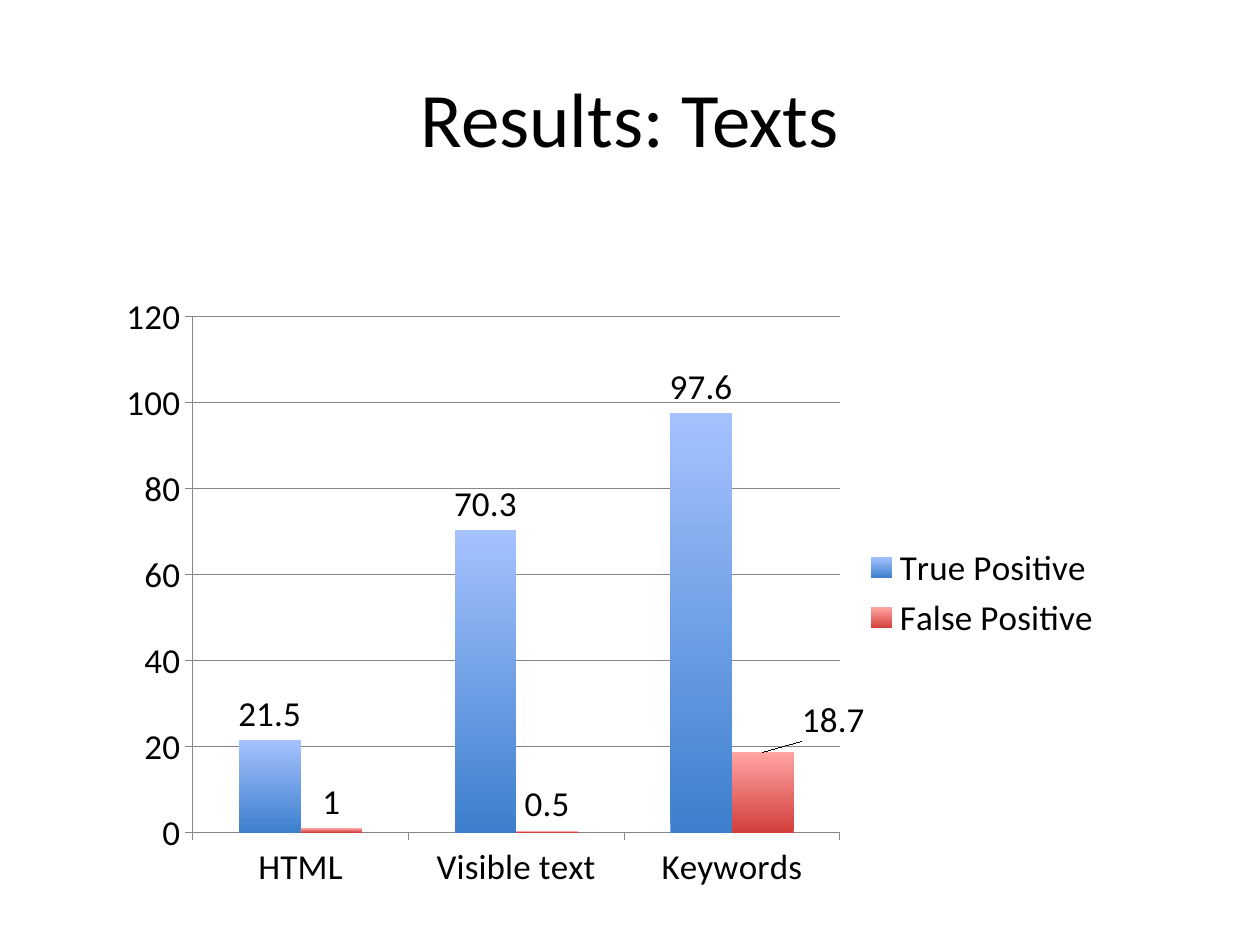
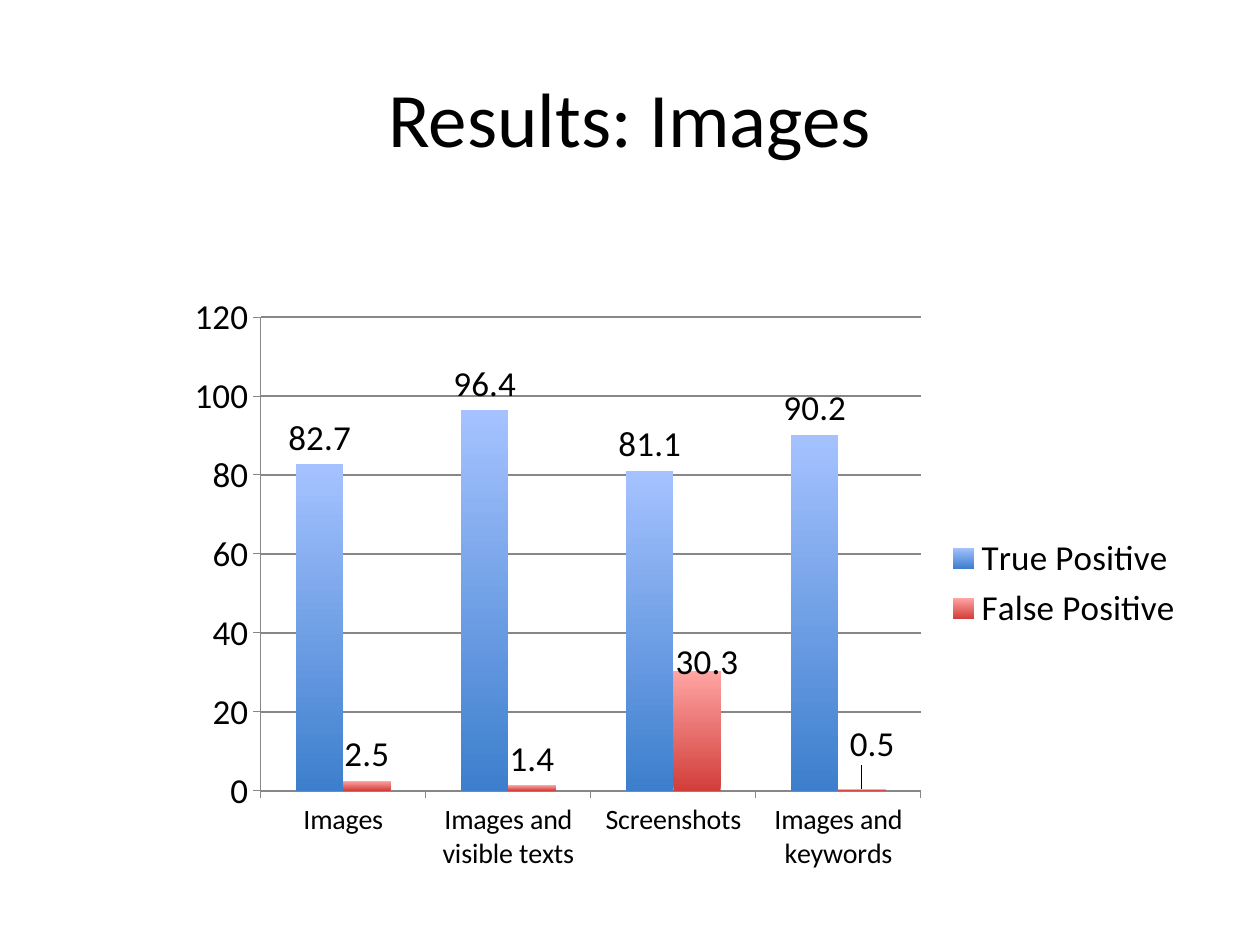
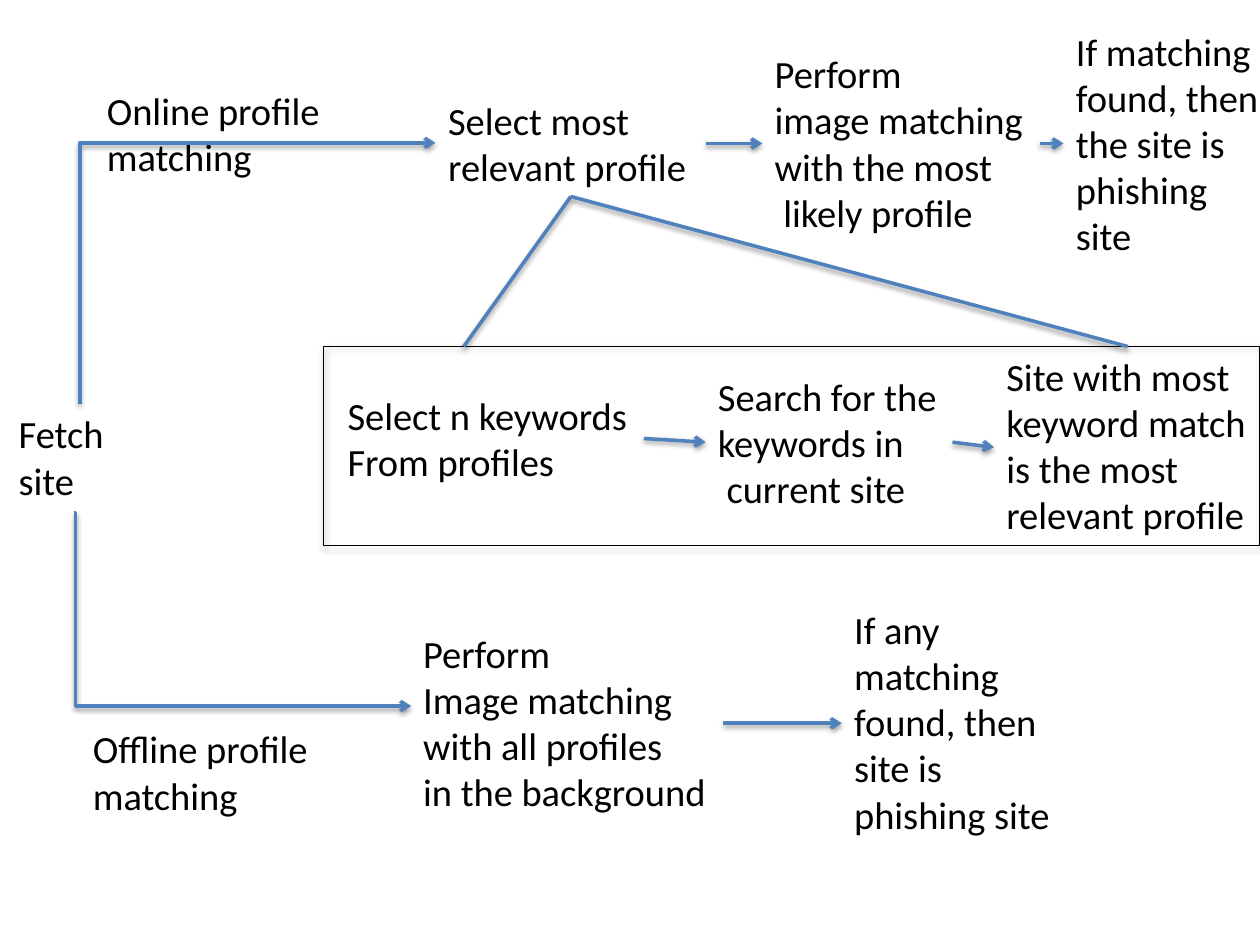
from pptx import Presentation, util as u
from pptx.chart.data import CategoryChartData
from pptx.dml.color import RGBColor
from pptx.enum import chart as ch, shapes, text
from pptx.oxml import parse_xml
from pptx.oxml.ns import nsdecls, qn

Pt = u.Pt
FONT = "Calibri"
HUES = {"ink": "000000", "line": "4F81BD", "grid": "878787"}
FADES = [("3D7FCD", "A5C2FF"), ("D23E3A", "FFA5A3")]
NAMES = ["True Positive", "False Positive"]

CHARTS = [
    {
        "title": "Results: Texts",
        "at": (61.2, 162, 576, 353.5),
        "cats": ["HTML", "Visible text", "Keywords"],
        "vals": [(21.5, 70.3, 97.6), (1, 0.5, 18.7)],
        "plot": (0.085, 0.054, 0.642, 0.834),
        "cat size": 20,
        "grid": 0.5,
        "moved": {2: (0.07, -0.01)},
    },
    {
        "title": "Results: Images",
        "at": (100, 162, 584, 342.7),
        "cats": ["Images", "Images and visible texts", "Screenshots", "Images and keywords"],
        "vals": [(82.7, 96.4, 81.1, 90.2), (2.5, 1.4, 30.3, 0.5)],
        "plot": (0.084, 0.056, 0.646, 0.79),
        "cat size": 16,
        "grid": 1,
        "moved": {2: (0.01, 0.03), 3: (0.01, -0.03)},
    },
]

STEPS = [
    ("Fetch site", (3.6, 231, 85, 60.5), True),
    ("Select n keywords\nFrom profiles", (191.5, 220.3, 176.4, 60.5), False),
    ("Search for the\nkeywords in\n current site", (403.2, 209.5, 141, 87), False),
    ("Site with most keyword match is the most relevant profile", (568, 198, 152, 113.8), True),
    ("Perform\nimage matching\nwith the most\n likely profile", (435.6, 25.2, 157.7, 113.8), False),
    ("Select most relevant profile", (249, 51.8, 154, 60.5), True),
    ("Perform\nImage matching\nwith all profiles\nin the background", (234.7, 356.4, 178.6, 113.8), False),
    ("If matching found, then the site is phishing site", (607.7, 12.2, 118.8, 140.4), True),
    ("If any matching found, then site is phishing site", (481, 342.7, 126.7, 140.4), True),
    ("Online profile\nmatching", (54, 46, 137.5, 60.5), False),
    ("Offline profile\nmatching", (46, 411, 139, 60.5), False),
]
FRAME = (185, 198, 535, 113.8)
ARROWS = [
    (367.9, 250.6, 403.2, 252.7),
    (544.3, 252.7, 568, 255.6),
    (403.2, 82, 435.6, 82),
    (413.3, 413.3, 481, 413.3),
    (594, 82, 607.7, 82),
]
RAYS = [(326.2, 112.3, 265, 198), (326.2, 112.3, 644.4, 198)]
RISE = (221.8, 257.8, 72.7, 54.7)
DROP = (42.5, 293, 235, 403.5)


def put(obj, vals):
    for key, val in vals.items():
        setattr(obj, key, val)


def pts(nums):
    return [Pt(n) for n in nums]


def rgb(hue):
    return RGBColor.from_string(hue)


def style(font, size):
    put(font, {"name": FONT, "size": Pt(size), "bold": False})
    font.color.rgb = rgb(HUES["ink"])


def stroke(line, hue, width):
    line.color.rgb = rgb(HUES[hue])
    line.width = Pt(width)


def write(slide, words, at, size, frame, align):
    box = slide.shapes.add_textbox(*pts(at)).text_frame
    box.text = words
    put(box, frame)
    for para in box.paragraphs:
        para.alignment = align
        style(para.runs[0].font, size)


def shade(shape, alpha, dist):
    props = shape._element.spPr
    for old in props.findall(qn("a:effectLst")):
        props.remove(old)
    props.append(parse_xml(
        f'<a:effectLst {nsdecls("a")}><a:outerShdw blurRad="{Pt(3.1)}" dist="{Pt(dist)}" '
        f'dir="5400000" rotWithShape="0"><a:srgbClr val="{HUES["ink"]}">'
        f'<a:alpha val="{alpha * 1000}"/></a:srgbClr></a:outerShdw></a:effectLst>'))


def link(slide, ends, kind=shapes.MSO_CONNECTOR.STRAIGHT, head=True):
    line = slide.shapes.add_connector(kind, *pts(ends))
    stroke(line.line, "line", 2)
    if head:
        line.line._get_or_add_ln().append(parse_xml(f'<a:tailEnd {nsdecls("a")} type="arrow"/>'))
    shade(line, 38, 1.6)
    return line._element.spPr


def layout(keys, extra=""):
    body = "".join(f'<c:{key} val="{val}"/>' for key, val in keys.items())
    return parse_xml(f'<c:layout {nsdecls("c")}><c:manualLayout>{extra}{body}'
                     '</c:manualLayout></c:layout>')


def graph(slide, item):
    data = CategoryChartData()
    data.categories = item["cats"]
    for name, vals in zip(NAMES, item["vals"]):
        data.add_series(name, vals)
    chart = slide.shapes.add_chart(
        ch.XL_CHART_TYPE.COLUMN_CLUSTERED, *pts(item["at"]), data).chart
    style(chart.font, 10)
    put(chart, {"has_title": False, "has_legend": True})
    put(chart.legend, {"position": ch.XL_LEGEND_POSITION.RIGHT, "include_in_layout": False})
    style(chart.legend.font, 20)
    for axis, size in ((chart.category_axis, item["cat size"]), (chart.value_axis, 20)):
        style(axis.tick_labels.font, size)
        stroke(axis.format.line, "grid", 0.5)
        put(axis, {"major_tick_mark": ch.XL_TICK_MARK.OUTSIDE,
                   "minor_tick_mark": ch.XL_TICK_MARK.NONE})
    put(chart.value_axis, {"minimum_scale": 0, "maximum_scale": 120, "major_unit": 20,
                           "has_major_gridlines": True})
    stroke(chart.value_axis.major_gridlines.format.line, "grid", item["grid"])
    plot = chart.plots[0]
    put(plot, {"gap_width": 150, "overlap": 0, "vary_by_categories": False})
    for bars, fade in zip(plot.series, FADES):
        fill = bars.format.fill
        fill.gradient()
        fill.gradient_angle = 90
        for stop, hue in zip(fill.gradient_stops, fade):
            stop.color.rgb = rgb(hue)
        put(bars.data_labels, {"show_value": True,
                               "position": ch.XL_LABEL_POSITION.OUTSIDE_END})
        style(bars.data_labels.font, 20)
    for spot, (dx, dy) in item["moved"].items():
        label = bars.points[spot].data_label
        style(label.font, 20)
        label.position = ch.XL_LABEL_POSITION.OUTSIDE_END
        node = bars._element.xpath(f"c:dLbls/c:dLbl[c:idx/@val={spot}]")[0]
        node.insert(1, layout({"x": dx, "y": dy}))
    area = chart._chartSpace.chart.plotArea
    for old in area.findall(qn("c:layout")):
        area.remove(old)
    modes = '<c:layoutTarget val="inner"/><c:xMode val="edge"/><c:yMode val="edge"/>'
    area.insert(0, layout(dict(zip("xywh", item["plot"])), modes))


def flow(slide):
    for words, at, wrap in STEPS:
        write(slide, words, at, 22,
              {"word_wrap": wrap, "auto_size": text.MSO_AUTO_SIZE.SHAPE_TO_FIT_TEXT},
              text.PP_ALIGN.LEFT)
    frame = slide.shapes.add_shape(shapes.MSO_SHAPE.RECTANGLE, *pts(FRAME))
    frame.fill.background()
    stroke(frame.line, "ink", 0.75)
    shade(frame, 35, 1.8)
    for ends in ARROWS:
        link(slide, ends)
    for ends in RAYS:
        link(slide, ends, head=False)
    bend = shapes.MSO_CONNECTOR.ELBOW
    rise = link(slide, RISE, bend)
    rise.find(qn("a:xfrm")).set("rot", "5400000")
    rise.find(qn("a:prstGeom")).set("prst", "bentConnector2")
    drop = link(slide, DROP, bend).find(qn("a:prstGeom"))
    for old in list(drop):
        drop.remove(old)
    drop.append(parse_xml(
        f'<a:avLst {nsdecls("a")}><a:gd name="adj1" fmla="val 400"/></a:avLst>'))


def main():
    deck = Presentation()
    put(deck, {"slide_width": Pt(720), "slide_height": Pt(540)})
    blank = deck.slide_layouts[6]
    for item in CHARTS:
        slide = deck.slides.add_slide(blank)
        write(slide, item["title"], (36, 21.6, 648, 90), 44,
              {"word_wrap": True, "vertical_anchor": text.MSO_ANCHOR.MIDDLE},
              text.PP_ALIGN.CENTER)
        graph(slide, item)
    flow(deck.slides.add_slide(blank))
    deck.save("out.pptx")


if __name__ == "__main__":
    main()
